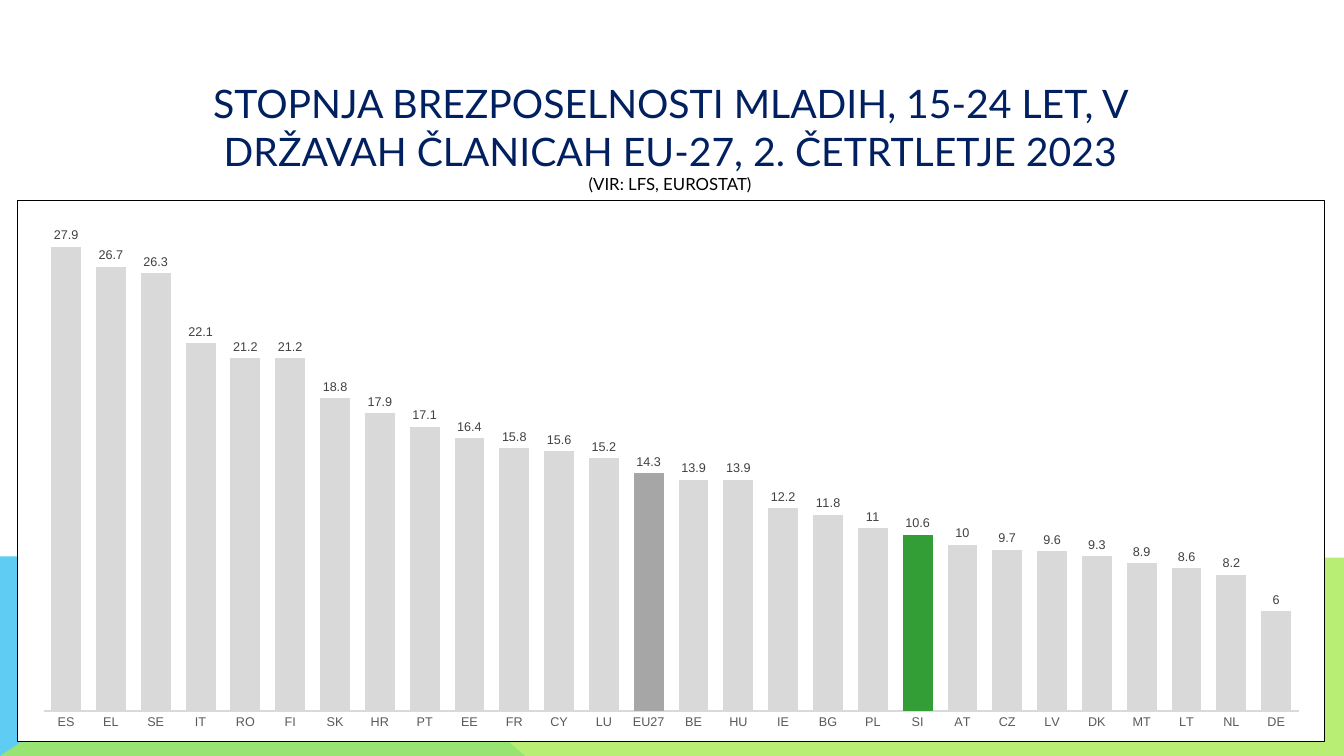
from lxml import etree
from pptx import Presentation
from pptx.chart.data import CategoryChartData
from pptx.dml.color import RGBColor
from pptx.enum.chart import XL_CHART_TYPE, XL_LABEL_POSITION, XL_TICK_LABEL_POSITION, XL_TICK_MARK
from pptx.enum.text import MSO_ANCHOR, PP_ALIGN
from pptx.oxml import parse_xml
from pptx.oxml.ns import qn
from pptx.util import Cm, Pt

COLUMNS = XL_CHART_TYPE.COLUMN_CLUSTERED
OUTSIDE = XL_LABEL_POSITION.OUTSIDE_END
NO_LABELS = XL_TICK_LABEL_POSITION.NONE
NO_TICK = XL_TICK_MARK.NONE
CENTER = PP_ALIGN.CENTER
MIDDLE = MSO_ANCHOR.MIDDLE

NS = ('xmlns:c="http://schemas.openxmlformats.org/drawingml/2006/chart" '
      'xmlns:a="http://schemas.openxmlformats.org/drawingml/2006/main"')

TITLE = [
    ("STOPNJA BREZPOSELNOSTI MLADIH, 15-24 LET, V DRŽAVAH ČLANICAH EU-27, "
     "2. ČETRTLETJE 2023", {"name": "Lato", "size": Pt(28)}, "002060"),
    ("(VIR: LFS, EUROSTAT)", {"name": "Lato", "size": Pt(12)}, "000000"),
]
TITLE_BOX = {"left": Cm(3.63), "top": Cm(1.47), "width": Cm(26.52), "height": Cm(3.96)}
CHART_BOX = (Cm(0.43), Cm(5.05), Cm(32.97), Cm(13.64))
PLOT_AREA = {"x": 0.02, "y": 0.02, "w": 0.96, "h": 0.925}

FOOTER_BANDS = [
    ([(0, 19.05), (0, 14.02), (7.57, 14.02), (13.23, 19.05)], "5ECCF3", 100),
    ([(0, 19.05), (7.54, 14.02), (33.87, 14.05), (33.87, 19.05)], "A7EA52", 80),
]

RATES = {
    "ES": 27.9, "EL": 26.7, "SE": 26.3, "IT": 22.1, "RO": 21.2, "FI": 21.2, "SK": 18.8,
    "HR": 17.9, "PT": 17.1, "EE": 16.4, "FR": 15.8, "CY": 15.6, "LU": 15.2, "EU27": 14.3,
    "BE": 13.9, "HU": 13.9, "IE": 12.2, "BG": 11.8, "PL": 11, "SI": 10.6, "AT": 10,
    "CZ": 9.7, "LV": 9.6, "DK": 9.3, "MT": 8.9, "LT": 8.6, "NL": 8.2, "DE": 6,
}
BAR_COLOR = "D9D9D9"
HIGHLIGHTS = {"EU27": "A6A6A6", "SI": "339E35"}


def rgb(value):
    return RGBColor.from_string(value)


def apply(obj, values):
    for name, value in values.items():
        setattr(obj, name, value)


def paint(fill, color):
    fill.solid()
    fill.fore_color.rgb = rgb(color)


def style_font(font, values, color):
    apply(font, values)
    font.color.rgb = rgb(color)


def add_band(slide, points, color, opacity):
    corners = [(Cm(x), Cm(y)) for x, y in points]
    builder = slide.shapes.build_freeform(*corners[0], scale=1.0)
    builder.add_line_segments(corners[1:], close=True)
    sp = builder.convert_to_shape()
    sp.shadow.inherit = False
    sp.line.fill.background()
    paint(sp.fill, color)
    if opacity < 100:
        clr = sp._element.spPr.find(".//" + qn("a:srgbClr"))
        etree.SubElement(clr, qn("a:alpha")).set("val", str(opacity * 1000))


def fill_title(title):
    apply(title, TITLE_BOX)
    tf = title.text_frame
    apply(tf, {"word_wrap": True, "vertical_anchor": MIDDLE})
    p = tf.paragraphs[0]
    p.alignment = CENTER
    for i, (text, values, color) in enumerate(TITLE):
        if i:
            p.add_line_break()
        r = p.add_run()
        r.text = text
        style_font(r.font, values, color)


def frame_chart(chart):
    space = chart._chartSpace
    space.find(qn("c:chart")).addnext(parse_xml(
        f'<c:spPr {NS}><a:solidFill><a:srgbClr val="FFFFFF"/></a:solidFill>'
        '<a:ln w="9525"><a:solidFill><a:srgbClr val="000000"/></a:solidFill></a:ln></c:spPr>'))
    plot_area = space.find(".//" + qn("c:plotArea"))
    for old in plot_area.findall(qn("c:layout")):
        plot_area.remove(old)
    sizes = "".join(f'<c:{key} val="{value}"/>' for key, value in PLOT_AREA.items())
    plot_area.insert(0, parse_xml(
        f'<c:layout {NS}><c:manualLayout><c:layoutTarget val="inner"/>'
        f'<c:xMode val="edge"/><c:yMode val="edge"/>{sizes}</c:manualLayout></c:layout>'))


def add_rate_chart(slide):
    data = CategoryChartData()
    data.categories = list(RATES)
    data.add_series("Series 1", list(RATES.values()))
    chart = slide.shapes.add_chart(COLUMNS, *CHART_BOX, data).chart
    apply(chart, {"has_legend": False, "has_title": False})
    style_font(chart.font, {"name": "Arial", "size": Pt(10)}, "000000")
    small = {"name": "Arial", "size": Pt(9)}

    cat = chart.category_axis
    apply(cat, {"major_tick_mark": NO_TICK, "minor_tick_mark": NO_TICK,
                "has_major_gridlines": False})
    style_font(cat.tick_labels.font, small, "595959")
    cat.format.line.width = Pt(1.5)
    cat.format.line.color.rgb = rgb(BAR_COLOR)

    val = chart.value_axis
    apply(val, {"minimum_scale": 0, "maximum_scale": 30, "has_major_gridlines": False,
                "major_tick_mark": NO_TICK, "minor_tick_mark": NO_TICK,
                "tick_label_position": NO_LABELS})
    val.format.line.fill.background()

    plot = chart.plots[0]
    apply(plot, {"gap_width": 50, "overlap": -27, "vary_by_categories": False,
                 "has_data_labels": True})
    labels = plot.data_labels
    apply(labels, {"show_value": True, "position": OUTSIDE, "number_format": "General",
                   "number_format_is_linked": False})
    style_font(labels.font, small, "404040")

    series = plot.series[0]
    series.invert_if_negative = False
    paint(series.format.fill, BAR_COLOR)
    for i, country in enumerate(RATES):
        if country in HIGHLIGHTS:
            paint(series.points[i].format.fill, HIGHLIGHTS[country])
    frame_chart(chart)


def main():
    prs = Presentation()
    apply(prs, {"slide_width": Cm(33.87), "slide_height": Cm(19.05)})
    slide = prs.slides.add_slide(prs.slide_layouts[5])
    for points, color, opacity in FOOTER_BANDS:
        add_band(slide, points, color, opacity)
    fill_title(slide.shapes.title)
    add_rate_chart(slide)
    prs.save("out.pptx")


if __name__ == "__main__":
    main()
